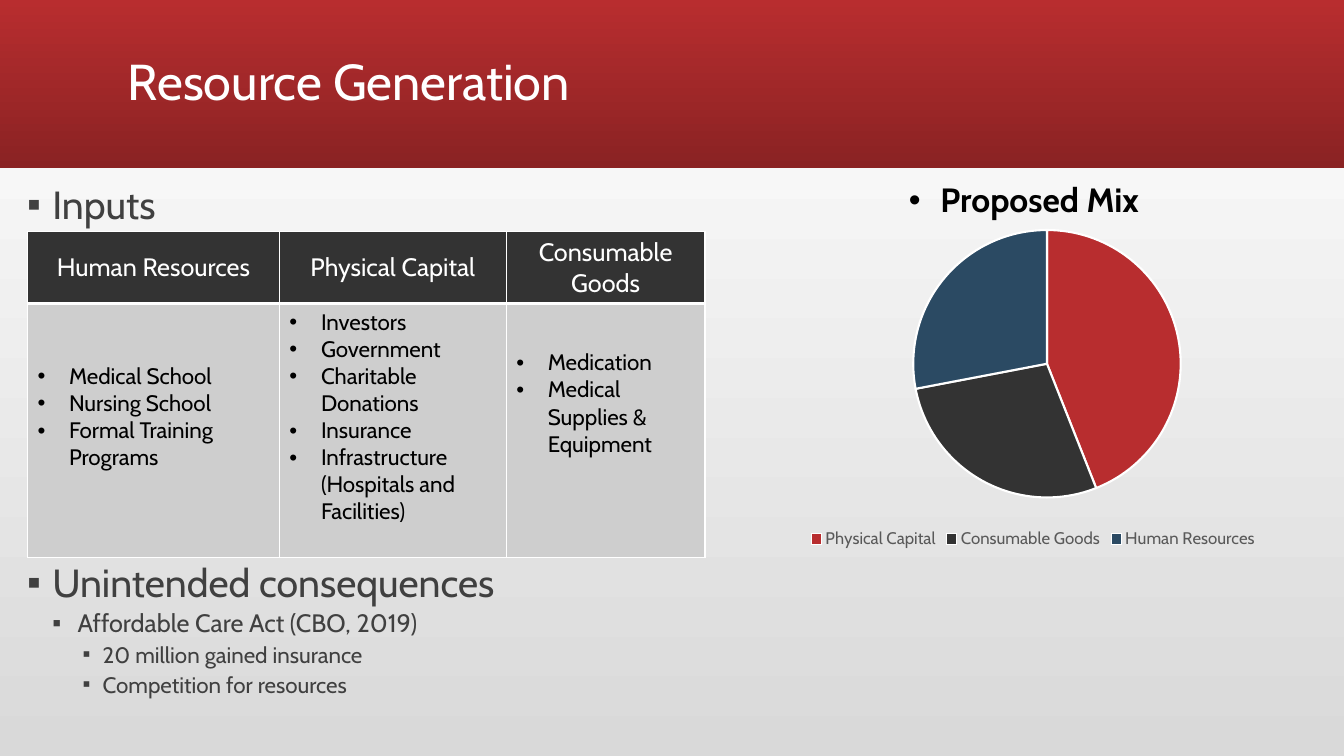
from dataclasses import dataclass

from lxml.etree import SubElement
from pptx import Presentation
from pptx.chart.data import CategoryChartData
from pptx.dml.color import RGBColor
from pptx.enum.chart import XL_CHART_TYPE, XL_LEGEND_POSITION
from pptx.enum.shapes import MSO_SHAPE
from pptx.enum.text import MSO_ANCHOR, MSO_AUTO_SIZE, PP_ALIGN
from pptx.oxml.ns import qn
from pptx.util import Pt


@dataclass(frozen=True)
class Theme:
    """Colours, type sizes and font of the slide."""
    font: str = "Cabin"
    white: str = "FFFFFF"
    black: str = "000000"
    body: str = "404040"
    legend: str = "595959"
    red: str = "B82D2F"
    dark_red: str = "8A2223"
    charcoal: str = "333333"
    blue: str = "2B4A63"
    cell: str = "CECECE"
    shade: str = "D9D9D9"
    title_size: int = 36
    heading_size: int = 28
    chart_title_size: int = 24
    medium_size: int = 18
    small_size: int = 16
    legend_size: int = 12


@dataclass(frozen=True)
class Box:
    """A region of the slide in points."""
    left: float
    top: float
    width: float
    height: float

    def lengths(self):
        """Return the four lengths for a shape call."""
        return Pt(self.left), Pt(self.top), Pt(self.width), Pt(self.height)


THEME = Theme()
INPUTS = {
    "Human Resources": ["Medical School", "Nursing School", "Formal Training Programs"],
    "Physical Capital": ["Investors", "Government", "Charitable Donations", "Insurance",
                         "Infrastructure (Hospitals and Facilities)"],
    "Consumable Goods": ["Medication", "Medical Supplies & Equipment"],
}
COLUMN_WIDTHS = (180, 162, 142)
ROW_HEIGHTS = (51, 181)
BOTTOM_MARGINS = (23, 23, 42)
OUTLINE = [
    ("Inputs", 0, THEME.heading_size, 18),
    ("Unintended consequences", 0, THEME.heading_size, 243),
    ("Affordable Care Act (CBO, 2019)", 1, THEME.medium_size, 6),
    ("20 million gained insurance", 2, THEME.small_size, 6),
    ("Competition for resources", 2, THEME.small_size, 6),
]
LEVEL_INDENTS = ((18, 18), (36, 18), (54, 14.4))
MIX = {"Physical Capital": (44, THEME.red),
       "Consumable Goods": (28, THEME.charcoal),
       "Human Resources": (28, THEME.blue)}
PLOT_AREA = {"x": 0.25, "y": 0.01, "w": 0.55, "h": 0.82}


def rgb(color):
    """Turn a hex string into a colour."""
    return RGBColor.from_string(color)


def style_font(font, size, color, bold=False):
    """Apply the theme font with a size and a colour."""
    font.name, font.size, font.bold = THEME.font, Pt(size), bold
    font.color.rgb = rgb(color)


def add_run(paragraph, text, size, color, bold=False):
    """Add one styled run to a paragraph."""
    run = paragraph.add_run()
    run.text = text
    style_font(run.font, size, color, bold)


def set_bullet(paragraph, character, margin=22.5, hanging=22.5):
    """Give a paragraph a hanging bullet."""
    properties = paragraph._p.get_or_add_pPr()
    properties.set("marL", str(Pt(margin)))
    properties.set("indent", str(-Pt(hanging)))
    SubElement(properties, qn("a:buFont"), typeface="Arial")
    SubElement(properties, qn("a:buChar"), char=character)


def next_paragraph(frame, index):
    """Return the first paragraph or add another one."""
    return frame.add_paragraph() if index else frame.paragraphs[0]


def set_gradient(fill, start, end, angle):
    """Fill with a gradient of two colours."""
    fill.gradient()
    fill.gradient_angle = angle
    for stop, color in zip(fill.gradient_stops, (start, end)):
        stop.color.rgb = rgb(color)


def place(shape, box):
    """Move a placeholder into a box."""
    shape.left, shape.top, shape.width, shape.height = box.lengths()


def add_header(slide, box):
    """Draw the red band and the title over it."""
    band = slide.shapes.add_shape(MSO_SHAPE.RECTANGLE, *box.lengths())
    band.shadow.inherit = False
    band.line.fill.background()
    set_gradient(band.fill, THEME.red, THEME.dark_red, 270)
    title = slide.shapes.title
    title.element.addprevious(band.element)
    place(title, Box(box.left + 84.2, box.top + 8, 792, box.height - 16))
    frame = title.text_frame
    frame.auto_size = MSO_AUTO_SIZE.NONE
    frame.vertical_anchor = MSO_ANCHOR.MIDDLE
    paragraph = frame.paragraphs[0]
    paragraph.alignment = PP_ALIGN.LEFT
    paragraph.line_spacing = 0.9
    add_run(paragraph, "Resource Generation", THEME.title_size, THEME.white)


def add_outline(slide, box):
    """Fill the body placeholder with the outline."""
    body = slide.placeholders[1]
    place(body, box)
    frame = body.text_frame
    frame.auto_size = MSO_AUTO_SIZE.NONE
    for index, (text, level, size, space) in enumerate(OUTLINE):
        paragraph = next_paragraph(frame, index)
        paragraph.level = level
        paragraph.line_spacing = 0.8
        paragraph.space_before = Pt(space)
        set_bullet(paragraph, "▪", *LEVEL_INDENTS[level])
        add_run(paragraph, text, size, THEME.body)


def style_cell(cell, fill, heavy_side):
    """Set white borders, fill and anchor of a cell."""
    properties = cell._tc.get_or_add_tcPr()
    for side in "LRTB":
        width = Pt(3 if side == heavy_side else 1)
        line = SubElement(properties, qn(f"a:ln{side}"), w=str(width))
        SubElement(SubElement(line, qn("a:solidFill")), qn("a:srgbClr"), val=THEME.white)
    cell.fill.solid()
    cell.fill.fore_color.rgb = rgb(fill)
    cell.vertical_anchor = MSO_ANCHOR.MIDDLE


def add_inputs_table(slide, box):
    """Draw the table of inputs."""
    table = slide.shapes.add_table(2, len(INPUTS), *box.lengths()).table
    table.horz_banding = False
    for row, height in zip(table.rows, ROW_HEIGHTS):
        row.height = Pt(height)
    for column, (heading, items) in enumerate(INPUTS.items()):
        table.columns[column].width = Pt(COLUMN_WIDTHS[column])
        header, content = table.cell(0, column), table.cell(1, column)
        style_cell(header, THEME.charcoal, "B")
        style_cell(content, THEME.cell, "T")
        paragraph = header.text_frame.paragraphs[0]
        paragraph.alignment = PP_ALIGN.CENTER
        add_run(paragraph, heading, THEME.medium_size, THEME.white)
        content.margin_bottom = Pt(BOTTOM_MARGINS[column])
        for index, item in enumerate(items):
            paragraph = next_paragraph(content.text_frame, index)
            set_bullet(paragraph, "•")
            add_run(paragraph, item, THEME.small_size, THEME.black)


def add_mix_chart(slide, box):
    """Draw the pie chart with its heading above it."""
    data = CategoryChartData()
    data.categories = list(MIX)
    data.add_series("Series 1", [value for value, color in MIX.values()])
    chart = slide.shapes.add_chart(XL_CHART_TYPE.PIE, *box.lengths(), data).chart
    chart.has_title = False
    style_font(chart.font, 10, THEME.black)
    chart.has_legend = True
    chart.legend.position = XL_LEGEND_POSITION.BOTTOM
    chart.legend.include_in_layout = False
    style_font(chart.legend.font, THEME.legend_size, THEME.legend)
    plot = chart.plots[0]
    plot.vary_by_categories = True
    for index, (value, color) in enumerate(MIX.values()):
        slice_format = plot.series[0].points[index].format
        slice_format.fill.solid()
        slice_format.fill.fore_color.rgb = rgb(color)
        slice_format.line.color.rgb = rgb(THEME.white)
        slice_format.line.width = Pt(1.5)
    area = chart.element.find(".//" + qn("c:plotArea"))
    for layout in area.findall(qn("c:layout")):
        area.remove(layout)
    layout = SubElement(area, qn("c:layout"))
    area.insert(0, layout)
    manual = SubElement(layout, qn("c:manualLayout"))
    settings = {"layoutTarget": "inner", "xMode": "edge", "yMode": "edge", **PLOT_AREA}
    for name, value in settings.items():
        SubElement(manual, qn(f"c:{name}"), val=str(value))

    heading = Box(box.left + 102.2, box.top - 37.4, 282, 36)
    frame = slide.shapes.add_textbox(*heading.lengths()).text_frame
    frame.word_wrap = True
    frame.auto_size = MSO_AUTO_SIZE.SHAPE_TO_FIT_TEXT
    set_bullet(frame.paragraphs[0], "•")
    add_run(frame.paragraphs[0], "Proposed Mix", THEME.chart_title_size, THEME.black, True)


def main():
    """Build the slide and save it."""
    presentation = Presentation()
    presentation.slide_width, presentation.slide_height = Pt(960), Pt(540)
    slide = presentation.slides.add_slide(presentation.slide_layouts[1])
    set_gradient(slide.background.fill, THEME.shade, THEME.white, 90)
    add_header(slide, Box(0, 0, 960, 120))
    add_outline(slide, Box(12.2, 131.8, 528, 388))
    add_inputs_table(slide, Box(19.6, 165.6, sum(COLUMN_WIDTHS), sum(ROW_HEIGHTS)))
    add_mix_chart(slide, Box(540, 162, 396, 233))
    presentation.save("out.pptx")


if __name__ == "__main__":
    main()
